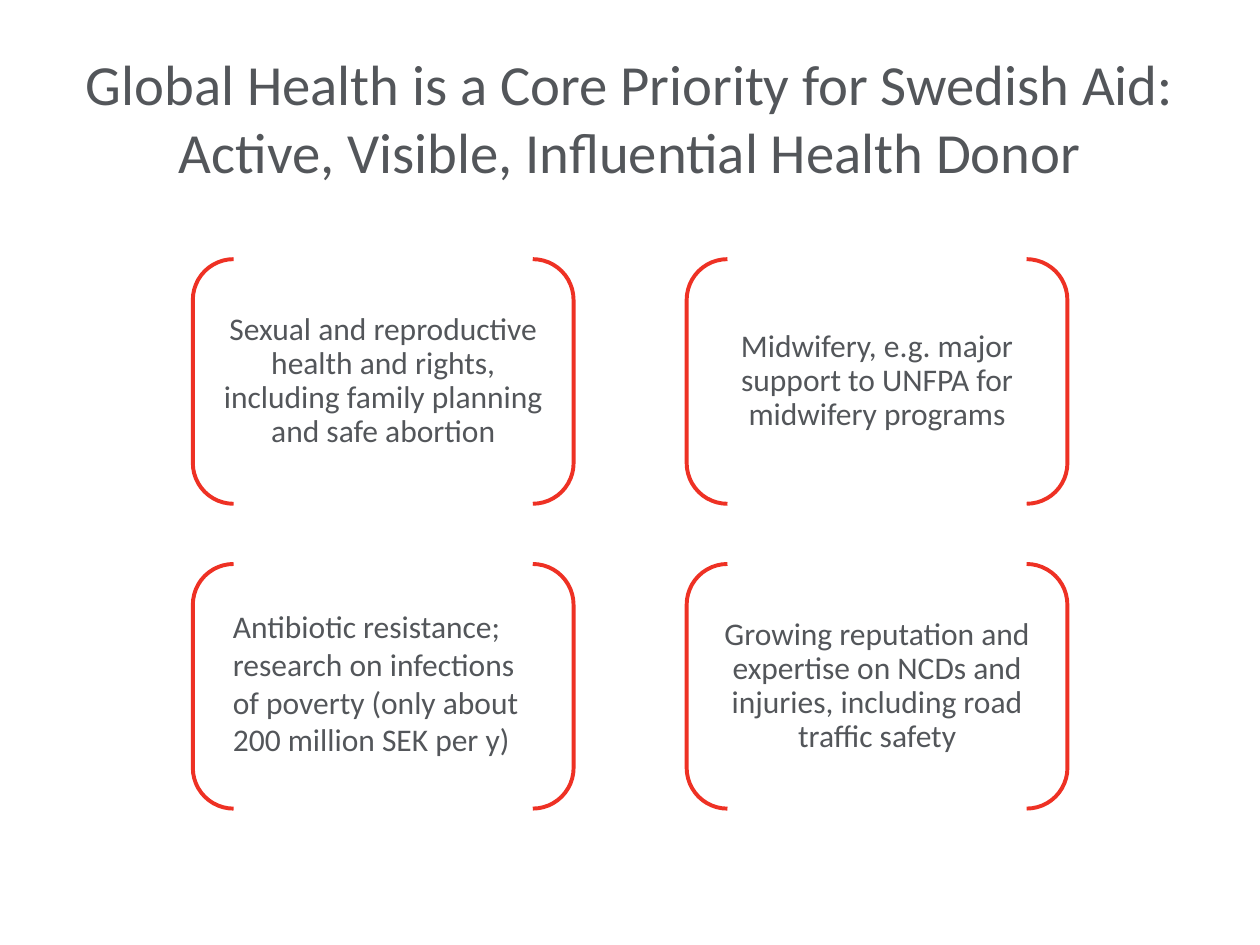
import pptx
import pptx.util
import pptx.dml.color
import pptx.enum.shapes
import pptx.enum.text

Pt = pptx.util.Pt
Color = pptx.dml.color.RGBColor.from_string
Align = pptx.enum.text.PP_ALIGN
Anchor = pptx.enum.text.MSO_ANCHOR


class Theme:
    font = "Calibri"
    ink = Color("53565A")
    red = Color("EE3124")
    white = Color("FFFFFF")
    title = Pt(32.4)
    body = Pt(18)


def add_text(box, lines, size, align, anchor, inset=None, space=None):
    """Add a text box at box (left, top, width, height), lines split by breaks."""
    frame = slide.shapes.add_textbox(*map(Pt, box)).text_frame
    frame.word_wrap = True
    frame.vertical_anchor = anchor
    if inset is not None:
        frame.margin_left = frame.margin_right = Pt(inset)
        frame.margin_top = frame.margin_bottom = Pt(inset)
    para = frame.paragraphs[0]
    para.alignment = align
    para.line_spacing = space
    for i, line in enumerate(lines):
        if i:
            para.add_line_break()
        run = para.add_run()
        run.text = line
        run.font.name = Theme.font
        run.font.size = size
        run.font.color.rgb = Theme.ink


deck = pptx.Presentation()
deck.slide_width, deck.slide_height = Pt(720), Pt(540)
slide = deck.slides.add_slide(deck.slide_layouts[6])

add_text(
    (36, 21.6, 648, 90),
    ["Global Health is a Core Priority for Swedish Aid:",
     "Active, Visible, Influential Health Donor"],
    Theme.title, Align.CENTER, Anchor.MIDDLE,
)

left, top = 110.2, 148.1
wide, high = 217.6, 139.8
step_x, step_y = 282.2, 174.2
pad = 6.8

topics = [
    "Sexual and reproductive health and rights, including family planning and safe abortion",
    "Midwifery, e.g. major support to UNFPA for midwifery programs",
    "Antibiotic resistance; research on infections of poverty (only about 200 million SEK per y)",
    "Growing reputation and expertise on NCDs and injuries, including road traffic safety",
]

for i, topic in enumerate(topics):
    row, col = divmod(i, 2)
    x, y = left + col * step_x, top + row * step_y
    frame = slide.shapes.add_shape(
        pptx.enum.shapes.MSO_SHAPE.DOUBLE_BRACKET, Pt(x), Pt(y), Pt(wide), Pt(high))
    frame.shadow.inherit = False
    frame.fill.solid()
    frame.fill.fore_color.rgb = Theme.white
    frame.line.color.rgb = Theme.red
    frame.line.width = Pt(2.25)
    if topic.startswith("Antibiotic"):
        add_text((126, 343.4, 185.8, 94.4), [topic], Theme.body, Align.LEFT, Anchor.TOP)
    else:
        add_text((x + pad, y + pad, wide - 2 * pad, high - 2 * pad), [topic],
                 Theme.body, Align.CENTER, Anchor.MIDDLE, inset=5, space=0.9)

deck.save("out.pptx")
